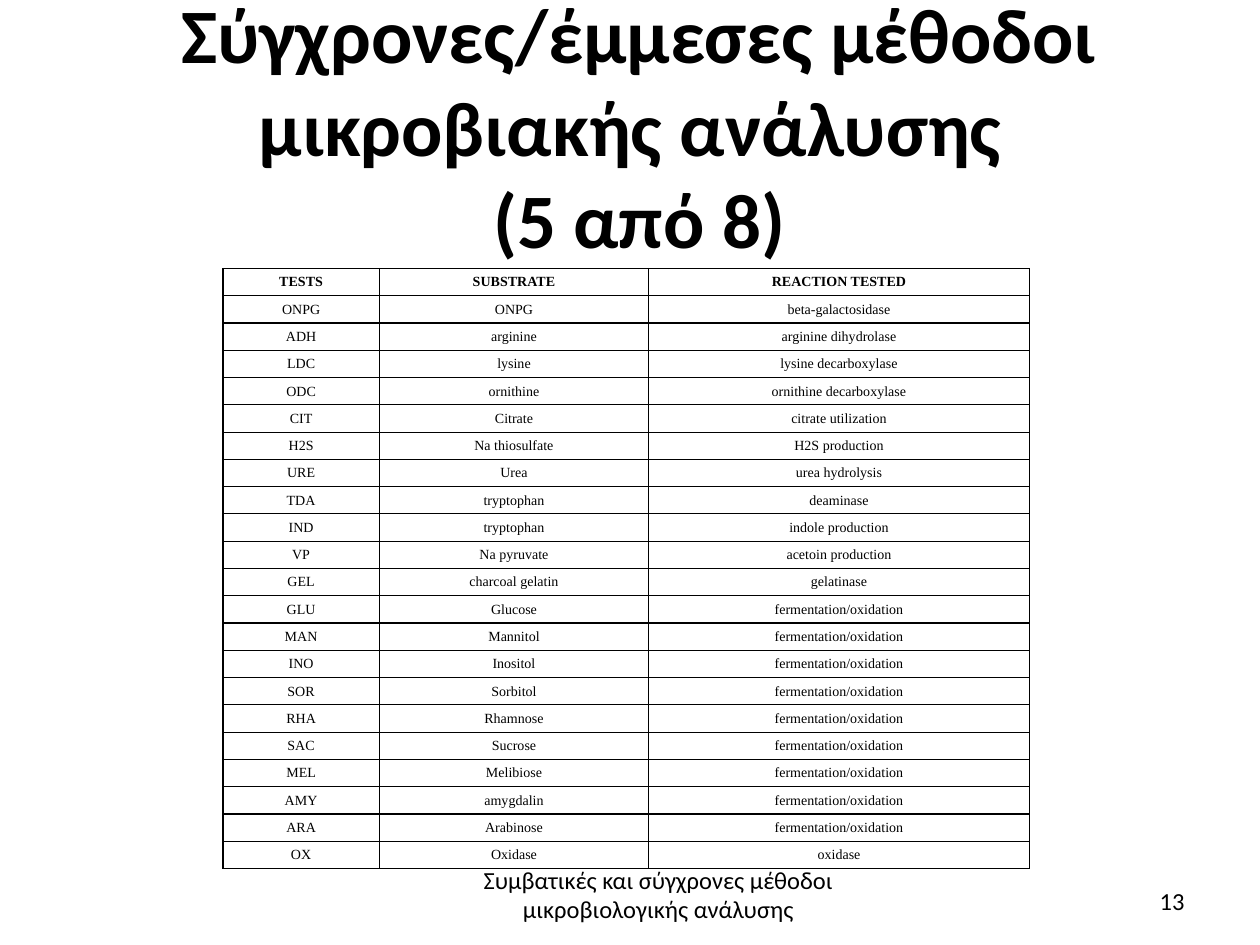
from dataclasses import dataclass

from lxml import etree
from pptx import Presentation
from pptx.dml.color import RGBColor
from pptx.enum.text import MSO_ANCHOR, MSO_AUTO_SIZE, PP_ALIGN
from pptx.oxml.ns import qn
from pptx.util import Inches, Pt

CENTER, RIGHT = PP_ALIGN.CENTER, PP_ALIGN.RIGHT
MIDDLE = MSO_ANCHOR.MIDDLE
NO_AUTOFIT = MSO_AUTO_SIZE.NONE


@dataclass(frozen=True)
class Theme:
    ink: str = "000000"
    font: str = "Calibri"
    table_font: str = "Times New Roman"
    title_size: float = 44
    footer_size: float = 14
    table_size: float = 8
    border_width: float = 0.75


THEME = Theme()

TITLE = "Σύγχρονες/έμμεσες μέθοδοι μικροβιακής ανάλυσης \v(5 από 8)"
FOOTER = "Συμβατικές και σύγχρονες μέθοδοι μικροβιολογικής ανάλυσης"
SLIDE_NUMBER = "13"

SUGAR_REACTION = "fermentation/oxidation"
SUGARS = [
    ("GLU", "Glucose"),
    ("MAN", "Mannitol"),
    ("INO", "Inositol"),
    ("SOR", "Sorbitol"),
    ("RHA", "Rhamnose"),
    ("SAC", "Sucrose"),
    ("MEL", "Melibiose"),
    ("AMY", "amygdalin"),
    ("ARA", "Arabinose"),
]
TEST_ROWS = [
    ("TESTS", "SUBSTRATE", "REACTION TESTED"),
    ("ONPG", "ONPG", "beta-galactosidase"),
    ("ADH", "arginine", "arginine dihydrolase"),
    ("LDC", "lysine", "lysine decarboxylase"),
    ("ODC", "ornithine", "ornithine decarboxylase"),
    ("CIT", "Citrate", "citrate utilization"),
    ("H2S", "Na thiosulfate", "H2S production"),
    ("URE", "Urea", "urea hydrolysis"),
    ("TDA", "tryptophan", "deaminase"),
    ("IND", "tryptophan", "indole production"),
    ("VP", "Na pyruvate", "acetoin production"),
    ("GEL", "charcoal gelatin", "gelatinase"),
    *[(test, sugar, SUGAR_REACTION) for test, sugar in SUGARS],
    ("OX", "Oxidase", "oxidase"),
]
COLUMN_WIDTHS = (1.24, 2.14, 3.02)
TABLE_HEIGHT = 4.77


def write_text(text_frame, text, size, font=THEME.font, bold=False, align=CENTER):
    text_frame.word_wrap = True
    paragraph = text_frame.paragraphs[0]
    paragraph.text = text
    paragraph.alignment = align
    paragraph.font.name = font
    paragraph.font.size = Pt(size)
    paragraph.font.bold = bold
    paragraph.font.color.rgb = RGBColor.from_string(THEME.ink)


def add_title(slide, text):
    title = slide.shapes.title
    title.left, title.top = Inches(0.51), Inches(0.05)
    title.width, title.height = Inches(9.13), Inches(1.89)
    title.text_frame.auto_size = NO_AUTOFIT
    title.text_frame.vertical_anchor = MIDDLE
    write_text(title.text_frame, text, THEME.title_size, bold=True)


def add_label(slide, text, left, top, width, height, align=CENTER):
    box = slide.shapes.add_textbox(Inches(left), Inches(top), Inches(width), Inches(height))
    box.text_frame.vertical_anchor = MIDDLE
    write_text(box.text_frame, text, THEME.footer_size, align=align)


def add_borders(cell):
    properties = cell._tc.get_or_add_tcPr()
    for side in ("a:lnL", "a:lnR", "a:lnT", "a:lnB"):
        line = etree.SubElement(properties, qn(side), w=str(Pt(THEME.border_width)))
        fill = etree.SubElement(line, qn("a:solidFill"))
        etree.SubElement(fill, qn("a:srgbClr"), val=THEME.ink)


def format_cell(cell, text, bold):
    cell.margin_left = cell.margin_right = Inches(0.08)
    cell.margin_top = cell.margin_bottom = Inches(0.04)
    cell.vertical_anchor = MIDDLE
    add_borders(cell)
    cell.fill.background()
    write_text(cell.text_frame, text, THEME.table_size, font=THEME.table_font, bold=bold)


def add_test_table(slide, rows):
    table = slide.shapes.add_table(
        len(rows), len(COLUMN_WIDTHS), Inches(1.77), Inches(2.13),
        Inches(sum(COLUMN_WIDTHS)), Inches(TABLE_HEIGHT),
    ).table
    table.horz_banding = False
    for column, width in zip(table.columns, COLUMN_WIDTHS):
        column.width = Inches(width)
    for row_index, values in enumerate(rows):
        table.rows[row_index].height = Inches(TABLE_HEIGHT / len(rows))
        for column_index, value in enumerate(values):
            format_cell(table.cell(row_index, column_index), value, bold=row_index == 0)


def main():
    presentation = Presentation()
    presentation.slide_width, presentation.slide_height = Inches(10), Inches(7.5)
    slide = presentation.slides.add_slide(presentation.slide_layouts[0])

    # Title; the subtitle placeholder is not needed
    add_title(slide, TITLE)
    subtitle = slide.placeholders[1].element
    subtitle.getparent().remove(subtitle)

    # Table of biochemical tests
    add_test_table(slide, TEST_ROWS)

    # Footer and slide number
    add_label(slide, FOOTER, 3.48, 6.82, 3.49, 0.55)
    add_label(slide, SLIDE_NUMBER, 7.17, 6.95, 2.33, 0.4, align=RIGHT)

    presentation.save("out.pptx")


if __name__ == "__main__":
    main()
